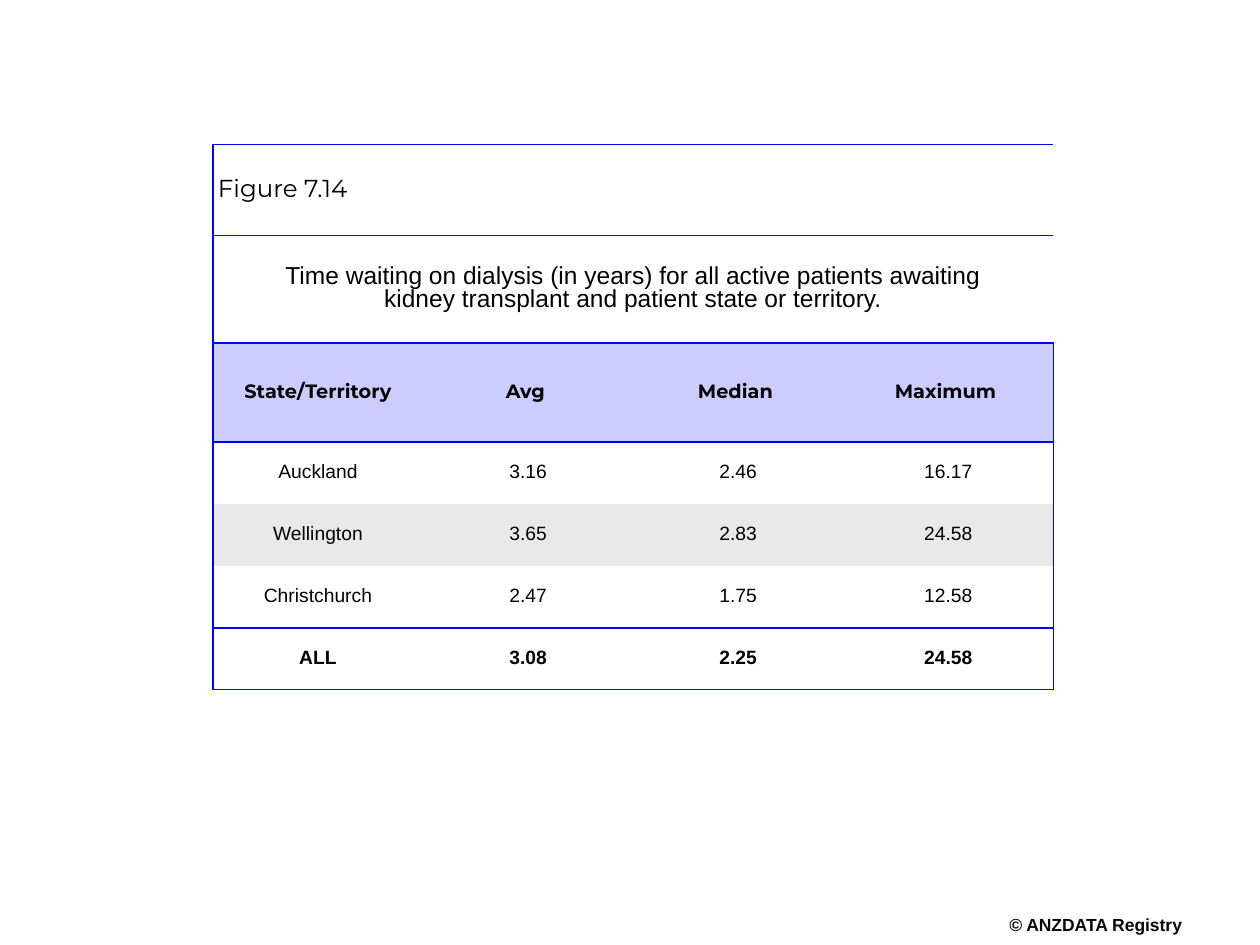
from lxml.etree import SubElement as Sub
from pptx import Presentation
from pptx.dml.color import RGBColor as Rgb
from pptx.enum.text import MSO_ANCHOR as Anchor, PP_ALIGN as Align
from pptx.oxml.ns import qn
from pptx.util import Inches, Pt

WIDE, HIGH = Inches(10), Inches(7.5)
HUES = {"ink": "000000", "note": "080808", "rule": "0000FF",
        "head": "CCCCFF", "band": "E9E9E9", "plain": "FFFFFF"}
ROWS = [
    ["Figure 7.14"],
    ["Time waiting on dialysis (in years) for all active patients awaiting "
     "kidney transplant and patient state or territory."],
    ["State/Territory", "Avg ", "Median ", "Maximum "],
    ["Auckland", "3.16", "2.46", "16.17"],
    ["Wellington", "3.65", "2.83", "24.58"],
    ["Christchurch", "2.47", "1.75", "12.58"],
    ["ALL", "3.08", "2.25", "24.58"],
]
SHARES = [0.096, 0.114, 0.105] + [0.0655] * 4
COLS = 4
RULED = {0, 1, 2, 3, 6, 7}
BODY = {"name": "Arial", "size": Pt(11), "bold": False}
FONTS = {
    0: {"name": "Montserrat", "size": Pt(14), "bold": False},
    1: {**BODY, "size": Pt(14)},
    2: {"name": "Montserrat", "size": Pt(11), "bold": True},
    6: {**BODY, "bold": True},
}
FILLS = {2: "head", 4: "band"}
PLAIN_STYLE = "{2D5ABB26-0587-4C30-8999-92F81FD0307C}"


def assign(item, values):
    """Set each named attribute on an item."""
    for name, value in values.items():
        setattr(item, name, value)


def write(frame, text, font, hue, align):
    """Write one formatted paragraph into a text frame."""
    para = frame.paragraphs[0]
    assign(para, {"alignment": align, "line_spacing": 0.85})
    run = para.add_run()
    run.text = text
    assign(run.font, font)
    run.font.color.rgb = Rgb.from_string(HUES[hue])


def edge(cell, row, col):
    """Draw the rules that fall on a cell's sides."""
    sides = {"L": col == 0, "R": col == COLS - 1,
             "T": row in RULED, "B": row + 1 in RULED}
    props = cell._tc.get_or_add_tcPr()
    for side, shown in sides.items():
        line = Sub(props, qn(f"a:ln{side}"), w=str(Pt(1)))
        if shown:
            fill = Sub(line, qn("a:solidFill"))
            Sub(fill, qn("a:srgbClr"), val=HUES["rule"])
        else:
            Sub(line, qn("a:noFill"))


def style(cell, row, col):
    """Give a cell its rules, fill and margins."""
    edge(cell, row, col)
    cell.fill.solid()
    cell.fill.fore_color.rgb = Rgb.from_string(HUES[FILLS.get(row, "plain")])
    side, end = (0.39, 0.02) if row == 1 else (0.04, 0.04)
    assign(cell, {"vertical_anchor": Anchor.MIDDLE,
                  "margin_left": Inches(side), "margin_right": Inches(side),
                  "margin_top": Inches(end), "margin_bottom": Inches(end)})


def add_grid(slide):
    """Add the waiting time table."""
    frame = slide.shapes.add_table(
        len(ROWS), COLS, int(WIDE * 0.169), int(HIGH * 0.153),
        int(WIDE * 0.667), int(HIGH * sum(SHARES)))
    table = frame.table
    assign(table, {"first_row": False, "horz_banding": False})
    table._tbl.tblPr.find(qn("a:tableStyleId")).text = PLAIN_STYLE
    for row, texts in enumerate(ROWS):
        table.rows[row].height = int(HIGH * SHARES[row])
        for col in range(COLS):
            style(table.cell(row, col), row, col)
        if len(texts) == 1:
            table.cell(row, 0).merge(table.cell(row, COLS - 1))
        align = Align.CENTER if row else Align.LEFT
        for col, text in enumerate(texts):
            write(table.cell(row, col).text_frame, text,
                  FONTS.get(row, BODY), "ink", align)


def add_note(slide):
    """Add the copyright line at the foot."""
    box = slide.shapes.add_textbox(int(WIDE * 0.799), int(HIGH * 0.971),
                                   int(WIDE * 0.141), int(HIGH * 0.023))
    frame = box.text_frame
    assign(frame, {"word_wrap": False, "margin_left": 0, "margin_right": 0,
                   "margin_top": 0, "margin_bottom": 0})
    write(frame, "© ANZDATA Registry",
          {"name": "Arial", "size": Pt(10), "bold": True}, "note", Align.CENTER)


def main():
    """Build and save the slide."""
    deck = Presentation()
    assign(deck, {"slide_width": WIDE, "slide_height": HIGH})
    slide = deck.slides.add_slide(deck.slide_layouts[6])
    add_note(slide)
    add_grid(slide)
    deck.save("out.pptx")


if __name__ == "__main__":
    main()
